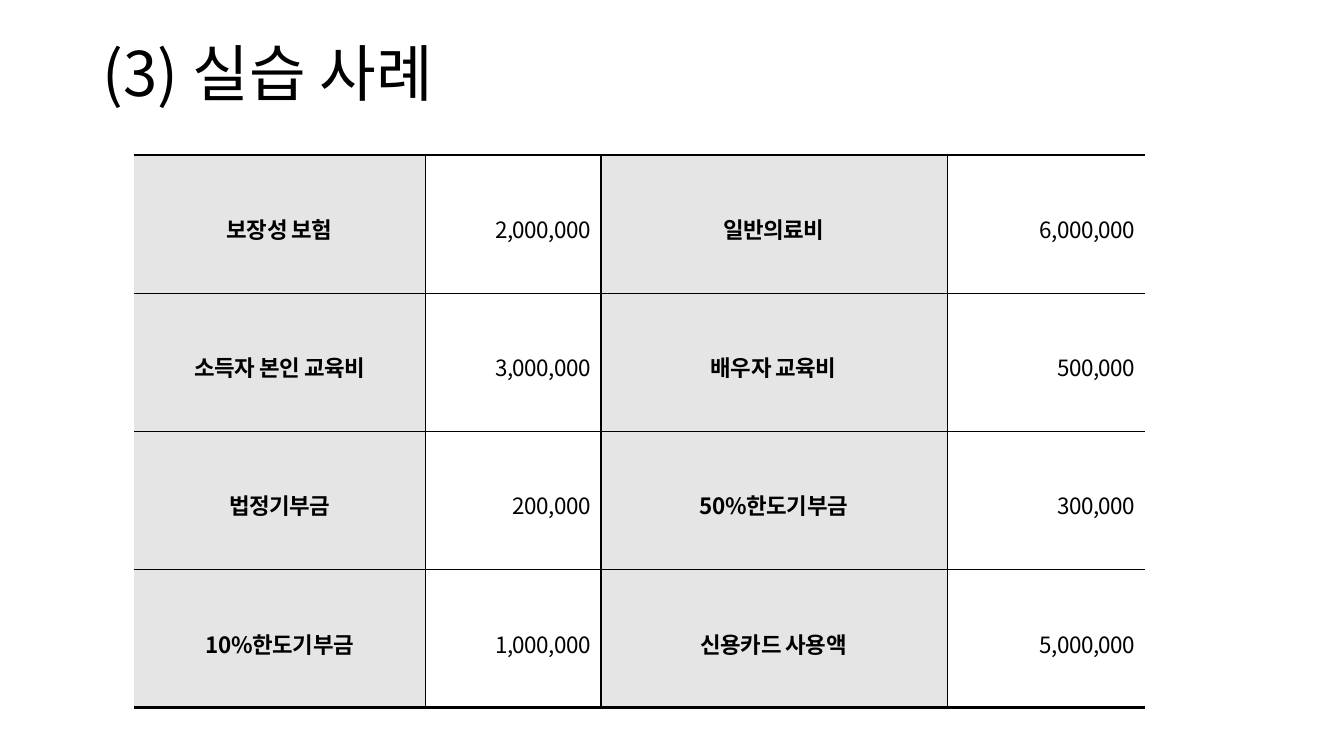
import pptx
import pptx.util
import pptx.dml.color
import pptx.enum.text
import pptx.oxml.ns
from lxml import etree

Inches, Pt = pptx.util.Inches, pptx.util.Pt
qn = pptx.oxml.ns.qn
PP_ALIGN = pptx.enum.text.PP_ALIGN
MSO_ANCHOR = pptx.enum.text.MSO_ANCHOR

BLACK = pptx.dml.color.RGBColor(0x00, 0x00, 0x00)
LABEL_GRAY = pptx.dml.color.RGBColor(0xE5, 0xE5, 0xE5)
FONT = "Noto Sans CJK KR"
THIN, OUTER, DIVIDER = 0.28, 1.7, 1.98
COL_WIDTHS = [2.89, 1.74, 3.43, 1.97]
ROWS = [
    ["보장성 보험", "2,000,000", "일반의료비", "6,000,000"],
    ["소득자 본인 교육비", "3,000,000", "배우자 교육비", "500,000"],
    ["법정기부금", "200,000", "50%한도기부금", "300,000"],
    ["10%한도기부금", "1,000,000", "신용카드 사용액", "5,000,000"],
]


def add_text(p, text, size, bold=False):
    r = p.add_run()
    r.text = text
    r.font.size = Pt(size)
    r.font.bold = bold
    r.font.color.rgb = BLACK
    r.font.name = FONT
    etree.SubElement(r.font._element, qn("a:ea"), typeface=FONT)
    return r


def set_borders(cell, widths):
    tcPr = cell._tc.get_or_add_tcPr()
    for i, (side, width) in enumerate(zip("LRTB", widths)):
        ln = etree.Element(qn(f"a:ln{side}"), w=str(Pt(width)))
        if width:
            fill = etree.SubElement(ln, qn("a:solidFill"))
            etree.SubElement(fill, qn("a:srgbClr"), val=str(BLACK))
        else:
            etree.SubElement(ln, qn("a:noFill"))
        tcPr.insert(i, ln)


def add_title(s, x, y, w, h):
    sp = s.shapes.title
    sp.left, sp.top, sp.width, sp.height = map(Inches, (x, y, w, h))
    tf = sp.text_frame
    tf.word_wrap = True
    tf.auto_size = pptx.enum.text.MSO_AUTO_SIZE.NONE
    tf.vertical_anchor = MSO_ANCHOR.MIDDLE
    p = tf.paragraphs[0]
    p.alignment = PP_ALIGN.LEFT
    p.line_spacing = 0.9
    add_text(p, "(3) 실습 사례", 44)
    p.add_line_break()
    br = p._p.findall(qn("a:br"))[0]
    etree.SubElement(br, qn("a:rPr"), sz="4400")


def fill_cell(cell, text, is_label):
    cell.vertical_anchor = MSO_ANCHOR.MIDDLE
    cell.margin_left = cell.margin_top = cell.margin_bottom = Inches(0.02)
    cell.margin_right = Inches(0.02 if is_label else 0.1)
    if is_label:
        cell.fill.solid()
        cell.fill.fore_color.rgb = LABEL_GRAY
    else:
        cell.fill.background()
    p = cell.text_frame.paragraphs[0]
    p.alignment = PP_ALIGN.CENTER if is_label else PP_ALIGN.RIGHT
    p.line_spacing = 1.3
    r = add_text(p, text, 16, is_label)
    r.font._element.set("spc", "-30")


def add_expense_table(s, x, y, w, h):
    frame = s.shapes.add_table(len(ROWS), len(COL_WIDTHS), *map(Inches, (x, y, w, h)))
    table = frame.table
    table.first_row = table.horz_banding = False
    for column, width in zip(table.columns, COL_WIDTHS):
        column.width = Inches(width)
    verticals = [0, THIN, DIVIDER, THIN, 0]
    horizontals = [OUTER] + [THIN] * (len(ROWS) - 1) + [OUTER]
    for i, row in enumerate(ROWS):
        table.rows[i].height = Inches(h / len(ROWS))
        for j, text in enumerate(row):
            cell = table.cell(i, j)
            fill_cell(cell, text, j % 2 == 0)
            set_borders(cell, verticals[j:j + 2] + horizontals[i:i + 2])


def main():
    prs = pptx.Presentation()
    prs.slide_width, prs.slide_height = Inches(13.33), Inches(7.5)
    s = prs.slides.add_slide(prs.slide_layouts[5])
    add_title(s, 0.92, 0.4, 11.5, 1.45)
    add_expense_table(s, 1.33, 1.54, sum(COL_WIDTHS), 5.48)
    prs.save("out.pptx")


if __name__ == "__main__":
    main()
